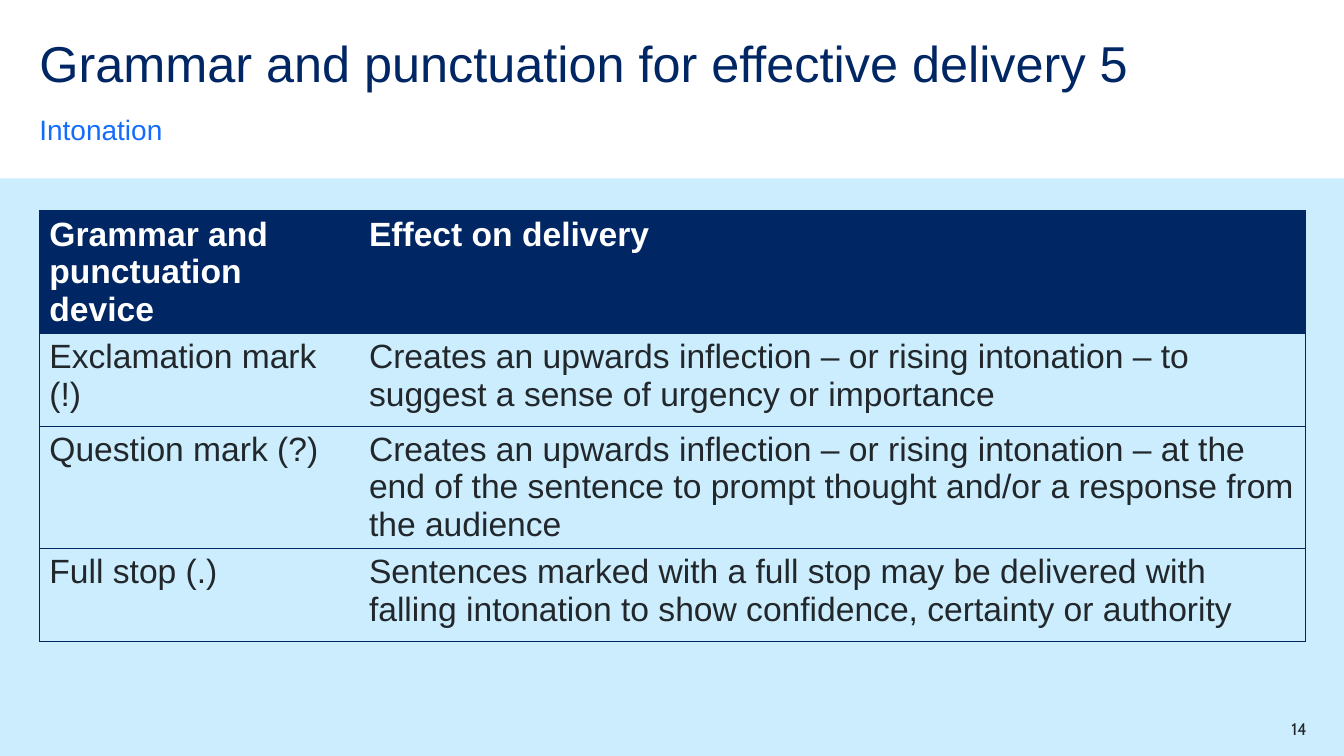
"""Build the slide on intonation, with a table of punctuation devices."""
from dataclasses import dataclass

from lxml.etree import SubElement
from pptx import Presentation
from pptx.dml.color import RGBColor
from pptx.enum.shapes import MSO_SHAPE
from pptx.enum.text import MSO_ANCHOR, MSO_AUTO_SIZE, PP_ALIGN
from pptx.oxml.ns import qn
from pptx.shapes.base import BaseShape
from pptx.slide import Slide
from pptx.table import _Cell
from pptx.text.text import _Paragraph
from pptx.util import Inches, Pt

NAVY = "002664"
BLUE = "146CFD"
PALE_BLUE = "CBEDFD"
CHARCOAL = "22272B"
WHITE = "FFFFFF"

LEFT_MARGIN = 0.39
COLUMN_WIDTHS = (3.17, 9.39)
ROW_HEIGHT = 0.92
TABLE_TOP = 2.09
BORDER_WIDTH = Pt(0.5)

ROWS = (
    ("Grammar and punctuation device", "Effect on delivery"),
    ("Exclamation mark (!)",
     "Creates an upwards inflection – or rising intonation – to suggest "
     "a sense of urgency or importance"),
    ("Question mark (?)",
     "Creates an upwards inflection – or rising intonation – at the end of "
     "the sentence to prompt thought and/or a response from the audience"),
    ("Full stop (.)",
     "Sentences marked with a full stop may be delivered with falling "
     "intonation to show confidence, certainty or authority"),
)


@dataclass(frozen=True)
class TextItem:
    text: str
    left: float
    top: float
    width: float
    height: float
    size: int
    color: str
    font: str = "Arial"
    anchor: MSO_ANCHOR = MSO_ANCHOR.TOP
    alignment: PP_ALIGN = PP_ALIGN.LEFT
    line_spacing: float = 1.0
    space_after: int = 0


TITLE = TextItem("Grammar and punctuation for effective delivery 5",
                 LEFT_MARGIN, 0.39, 11.22, 0.57, 36, NAVY, line_spacing=0.9)
SUBTITLE = TextItem("Intonation", LEFT_MARGIN, 1.11, 11.02, 0.34, 20, BLUE,
                    anchor=MSO_ANCHOR.BOTTOM, line_spacing=1.5, space_after=12)
PAGE_NUMBER = TextItem("14", 12.17, 7.13, 0.79, 0.2, 12, CHARCOAL, "Cabin",
                       alignment=PP_ALIGN.RIGHT)


def rgb(color: str) -> RGBColor:
    return RGBColor.from_string(color)


def format_runs(paragraph: _Paragraph, size: int, color: str,
                font: str = "Arial", bold: bool = False) -> None:
    for run in paragraph.runs:
        run.font.name = font
        run.font.size = Pt(size)
        run.font.bold = bold
        run.font.color.rgb = rgb(color)


def fill_text(shape: BaseShape, item: TextItem) -> None:
    shape.left, shape.top = Inches(item.left), Inches(item.top)
    shape.width, shape.height = Inches(item.width), Inches(item.height)
    text_frame = shape.text_frame
    text_frame.text = item.text
    text_frame.word_wrap = True
    text_frame.auto_size = MSO_AUTO_SIZE.NONE
    text_frame.vertical_anchor = item.anchor
    text_frame.margin_left = text_frame.margin_right = 0
    text_frame.margin_top = text_frame.margin_bottom = 0
    paragraph = text_frame.paragraphs[0]
    paragraph.alignment = item.alignment
    paragraph.line_spacing = item.line_spacing
    paragraph.space_before = Pt(0)
    paragraph.space_after = Pt(item.space_after)
    format_runs(paragraph, item.size, item.color, item.font)


def remove_bullet(paragraph: _Paragraph) -> None:
    properties = paragraph._p.get_or_add_pPr()
    properties.set("marL", "0")
    properties.set("indent", "0")
    SubElement(properties, qn("a:buNone"))


def add_border(cell: _Cell, side: str, visible: bool) -> None:
    properties = cell._tc.get_or_add_tcPr()
    line = SubElement(properties, qn(f"a:ln{side}"), w=str(int(BORDER_WIDTH)))
    if visible:
        fill = SubElement(line, qn("a:solidFill"))
        SubElement(fill, qn("a:srgbClr"), val=NAVY)
    else:
        SubElement(line, qn("a:noFill"))


def add_background(slide: Slide) -> None:
    panel = slide.shapes.add_shape(MSO_SHAPE.RECTANGLE, 0, Inches(1.77),
                                   Inches(13.33), Inches(5.73))
    panel.shadow.inherit = False
    panel.fill.solid()
    panel.fill.fore_color.rgb = rgb(PALE_BLUE)
    panel.line.fill.background()


def add_device_table(slide: Slide) -> None:
    table = slide.shapes.add_table(
        len(ROWS), len(COLUMN_WIDTHS), Inches(LEFT_MARGIN), Inches(TABLE_TOP),
        Inches(sum(COLUMN_WIDTHS)), Inches(ROW_HEIGHT * len(ROWS))).table
    table.horz_banding = False
    for column, width in zip(table.columns, COLUMN_WIDTHS):
        column.width = Inches(width)
    for row_index, texts in enumerate(ROWS):
        table.rows[row_index].height = Inches(ROW_HEIGHT)
        is_header = row_index == 0
        for column_index, text in enumerate(texts):
            cell = table.cell(row_index, column_index)
            cell.text_frame.text = text
            format_runs(cell.text_frame.paragraphs[0], 24,
                        WHITE if is_header else CHARCOAL, bold=is_header)
            add_border(cell, "L", column_index == 0)
            add_border(cell, "R", column_index == len(texts) - 1)
            add_border(cell, "T", True)
            add_border(cell, "B", True)
            if is_header:
                cell.fill.solid()
                cell.fill.fore_color.rgb = rgb(NAVY)
            else:
                cell.fill.background()


def main() -> None:
    presentation = Presentation()
    presentation.slide_width = Inches(13.33)
    presentation.slide_height = Inches(7.5)
    slide = presentation.slides.add_slide(presentation.slide_layouts[1])
    add_background(slide)
    fill_text(slide.shapes.title, TITLE)
    subtitle = slide.placeholders[1]
    fill_text(subtitle, SUBTITLE)
    remove_bullet(subtitle.text_frame.paragraphs[0])
    add_device_table(slide)
    fill_text(slide.shapes.add_textbox(0, 0, 0, 0), PAGE_NUMBER)
    presentation.save("out.pptx")


if __name__ == "__main__":
    main()
